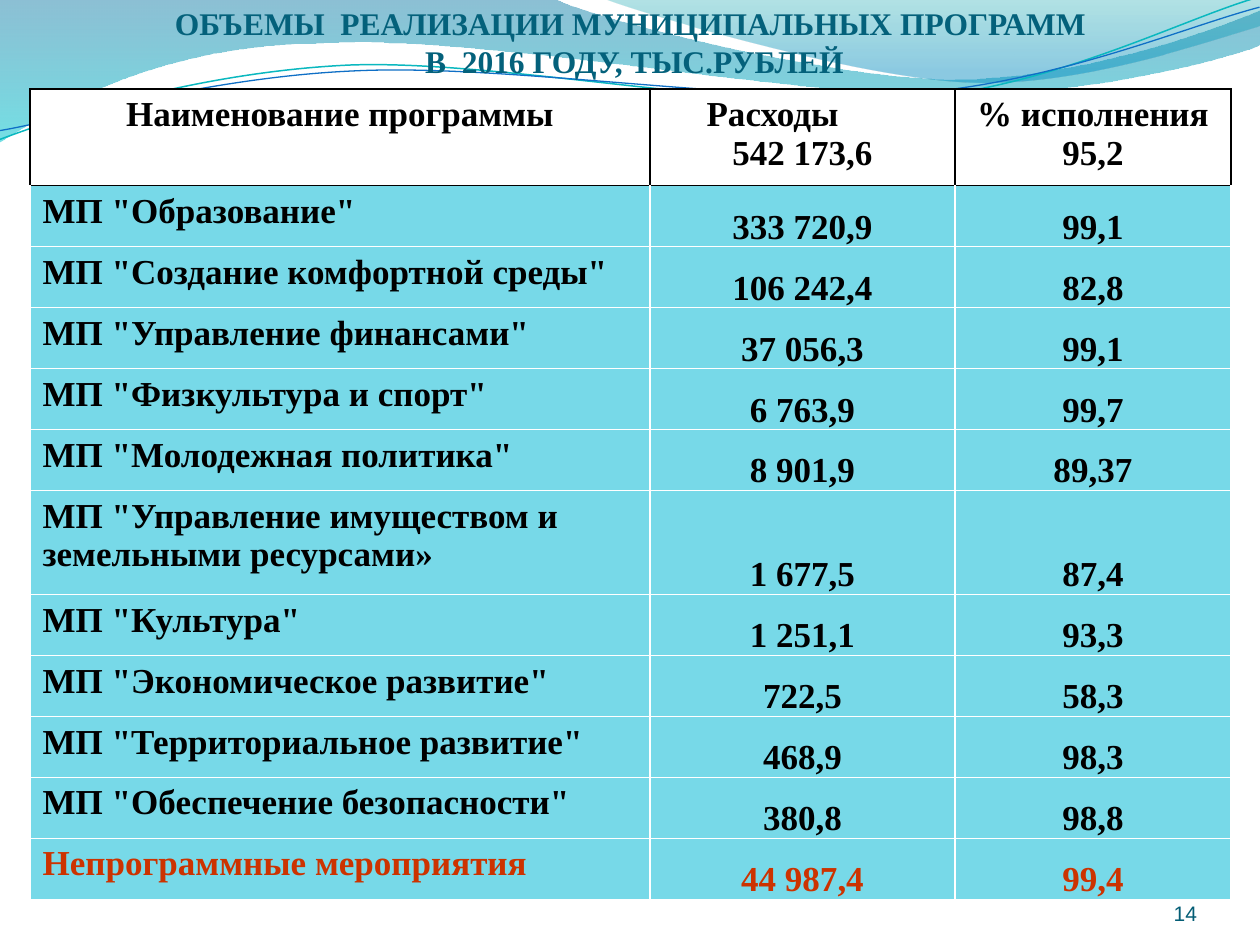
from dataclasses import dataclass

from lxml.etree import SubElement
from pptx import Presentation
from pptx.dml.color import RGBColor
from pptx.enum.text import MSO_ANCHOR, PP_ALIGN
from pptx.oxml.ns import qn
from pptx.util import Emu, Pt

Point = tuple[int, int]
SERIF = "Times New Roman"
BLACK, WHITE, AQUA, RED = "000000", "FFFFFF", "77D9E8", "CC3300"


@dataclass
class Stop:
    position: float
    color: str
    opacity: int


@dataclass
class Wave:
    start: Point
    segments: list[tuple[Point, ...]]
    stops: tuple[Stop, ...] = ()
    line_color: str = ""
    line_width: float = 0
    rotation: float = 0


@dataclass
class Program:
    name: str
    expenses: str
    percent: str
    height: int = 61
    color: str = BLACK


WAVES = [
    Wave((0, -1), [((554, -1),),
                   ((600, 21), (837, 79), (955, 79)),
                   ((1074, 79), (1207, 33), (1260, 11)),
                   ((1261, 45),),
                   ((1239, 55), (1096, 96), (940, 95)),
                   ((784, 95), (481, 35), (324, 43)),
                   ((163, 44), (58, 105), (-1, 142)),
                   ((0, -1),)],
         (Stop(0, "0074A1", 45), Stop(1, "00C6CF", 55))),
    Wave((604, -1), [((641, 14), (859, 78), (969, 82)),
                     ((1079, 87), (1211, 40), (1260, 26)),
                     ((1260, 0),),
                     ((604, -1),)],
         (Stop(0, "00A1A9", 30), Stop(0.8, "008BBF", 45))),
    Wave((-3, 110), [((58, 90), (199, 52), (349, 52)),
                     ((498, 53), (747, 118), (898, 113)),
                     ((1050, 109), (1184, 45), (1261, 27))],
         line_color="0AB8BF", line_width=0.85, rotation=357.3),
    Wave((-3, 101), [((59, 94), (207, 57), (357, 58)),
                     ((508, 58), (752, 110), (903, 107)),
                     ((1053, 104), (1186, 53), (1262, 37))],
         line_color="0F6FC6", line_width=0.75, rotation=357.3),
]

PROGRAMS = [
    Program('МП "Образование"', "333 720,9", "99,1"),
    Program('МП "Создание комфортной среды"', "106 242,4", "82,8"),
    Program('МП "Управление финансами"', "37 056,3", "99,1"),
    Program('МП "Физкультура и спорт"', "6 763,9", "99,7"),
    Program('МП "Молодежная политика"', "8 901,9", "89,37"),
    Program('МП "Управление имуществом и земельными ресурсами»', "1 677,5", "87,4", height=104),
    Program('МП "Культура"', "1 251,1", "93,3"),
    Program('МП "Экономическое развитие"', "722,5", "58,3"),
    Program('МП "Территориальное развитие"', "468,9", "98,3"),
    Program('МП "Обеспечение безопасности"', "380,8", "98,8"),
    Program("Непрограммные мероприятия", "44 987,4", "99,4", color=RED),
]


def px(length: int) -> Emu:
    return Emu(round(length * 914400 / 126))


def rgb(color: str) -> RGBColor:
    return RGBColor.from_string(color)


def add_run(paragraph, text: str, size: float, color: str, font: str = SERIF, bold: bool = True) -> None:
    run = paragraph.add_run()
    run.text = text
    run.font.size, run.font.bold, run.font.name = Pt(size), bold, font
    run.font.color.rgb = rgb(color)


def set_margins(target, top: int = 0) -> None:
    target.margin_left = target.margin_right = target.margin_bottom = 0
    target.margin_top = px(top)


def bend_segments(shape, segments: list[tuple[Point, ...]]) -> None:
    outline = next(shape.element.iter(qn("a:path")))
    steps = iter(outline.findall(qn("a:lnTo")))
    for segment in segments:
        first = next(steps)
        if len(segment) == 3:
            first.tag = qn("a:cubicBezTo")
            for _ in range(2):
                control = next(steps)
                first.append(control[0])
                outline.remove(control)


def draw_wave(slide, wave: Wave) -> None:
    builder = slide.shapes.build_freeform(px(wave.start[0]), px(wave.start[1]))
    builder.add_line_segments([(px(x), px(y)) for segment in wave.segments for x, y in segment],
                              close=bool(wave.stops))
    shape = builder.convert_to_shape()
    bend_segments(shape, wave.segments)
    shape.shadow.inherit = False
    shape.rotation = wave.rotation
    if not wave.stops:
        shape.fill.background()
        shape.line.color.rgb = rgb(wave.line_color)
        shape.line.width = Pt(wave.line_width)
        return
    shape.line.fill.background()
    shape.fill.gradient()
    shape.fill.gradient_angle = 270
    for gradient_stop, stop in zip(shape.fill.gradient_stops, wave.stops):
        gradient_stop.position = stop.position
        gradient_stop.color.rgb = rgb(stop.color)
    for color, stop in zip(shape.element.spPr.iter(qn("a:srgbClr")), wave.stops):
        SubElement(color, qn("a:alpha"), val=str(stop.opacity * 1000))


def style_cell(cell, fill: str, border: str, top_border: str) -> None:
    properties = cell._tc.get_or_add_tcPr()
    for side, color in (("L", border), ("R", border), ("T", top_border), ("B", border)):
        edge = SubElement(properties, qn(f"a:ln{side}"), w=str(Pt(1)))
        SubElement(SubElement(edge, qn("a:solidFill")), qn("a:srgbClr"), val=color)
    cell.fill.solid()
    cell.fill.fore_color.rgb = rgb(fill)


def fill_header(cells) -> None:
    name, expenses, percent = cells
    for cell in cells:
        style_cell(cell, WHITE, BLACK, BLACK)
    for cell, text in ((name, "Наименование программы"), (percent, "% исполнения 95,2")):
        heading = cell.text_frame.paragraphs[0]
        heading.alignment = PP_ALIGN.CENTER
        add_run(heading, text, 20, BLACK)
    heading = expenses.text_frame.paragraphs[0]
    heading._p.get_or_add_pPr().set("marL", str(px(44)))
    add_run(heading, "Расходы", 20, BLACK)
    total = expenses.text_frame.add_paragraph()
    total.alignment = PP_ALIGN.CENTER
    add_run(total, "542 173,6", 20, BLACK)


def fill_program(cells, program: Program, top_border: str) -> None:
    for cell, text in zip(cells, (program.name, program.expenses, program.percent)):
        style_cell(cell, AQUA, WHITE, top_border)
        paragraph = cell.text_frame.paragraphs[0]
        if text != program.name:
            set_margins(cell)
            cell.vertical_anchor = MSO_ANCHOR.BOTTOM
            paragraph.alignment = PP_ALIGN.CENTER
        add_run(paragraph, text, 20, program.color)


def draw_programs(slide) -> None:
    heights = [91] + [program.height for program in PROGRAMS]
    widths = (620, 305, 276)
    table = slide.shapes.add_table(len(heights), len(widths), px(30), px(89),
                                   px(sum(widths)), px(sum(heights))).table
    table.first_row = table.horz_banding = False
    for column, width in zip(table.columns, widths):
        column.width = px(width)
    for row, height in zip(table.rows, heights):
        row.height = px(height)
    header, *body = [list(row.cells) for row in table.rows]
    fill_header(header)
    for index, (cells, program) in enumerate(zip(body, PROGRAMS)):
        fill_program(cells, program, WHITE if index else BLACK)


def draw_title(slide) -> None:
    title = slide.shapes.title
    title.left, title.top, title.width, title.height = map(px, (39, 0, 1191, 80))
    frame = title.text_frame
    set_margins(frame, top=6)
    frame.vertical_anchor = MSO_ANCHOR.BOTTOM
    heading = frame.paragraphs[0]
    heading.alignment = PP_ALIGN.CENTER
    add_run(heading, "ОБЪЕМЫ  РЕАЛИЗАЦИИ МУНИЦИПАЛЬНЫХ ПРОГРАММ ", 18, "04617B")
    heading.add_line_break()
    add_run(heading, "В  2016 ГОДУ, ТЫС.РУБЛЕЙ", 18, "04617B")


def draw_page_number(slide) -> None:
    frame = slide.shapes.add_textbox(px(1092), px(876), px(105), px(50)).text_frame
    frame.word_wrap = True
    set_margins(frame)
    frame.vertical_anchor = MSO_ANCHOR.BOTTOM
    number = frame.paragraphs[0]
    number.alignment = PP_ALIGN.RIGHT
    add_run(number, "14", 12, "045D75", "Arial", bold=False)


def main() -> None:
    presentation = Presentation()
    presentation.slide_width, presentation.slide_height = px(1260), px(945)
    slide = presentation.slides.add_slide(presentation.slide_layouts[5])
    for wave in WAVES:
        draw_wave(slide, wave)
    heading = slide.shapes.title.element
    heading.getparent().append(heading)
    draw_title(slide)
    draw_page_number(slide)
    draw_programs(slide)
    presentation.save("out.pptx")


if __name__ == "__main__":
    main()
